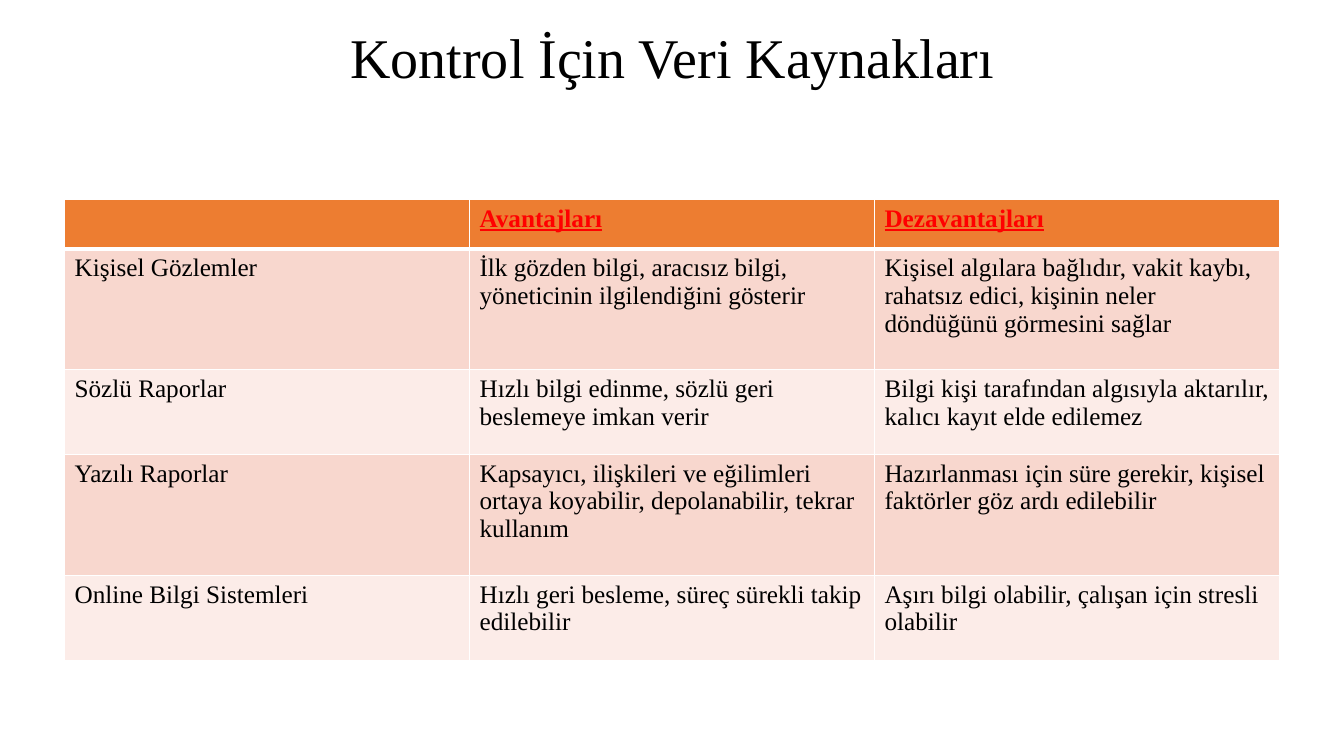
from lxml import etree
from pptx import Presentation
from pptx.dml.color import RGBColor
from pptx.enum.text import MSO_ANCHOR, PP_ALIGN
from pptx.oxml.ns import qn
from pptx.util import Inches, Pt

CENTER = PP_ALIGN.CENTER
MIDDLE = MSO_ANCHOR.MIDDLE
FONT = "Times New Roman"
WHITE, BLACK, RED = "FFFFFF", "000000", "FF0000"
HEADER_FILL = "ED7D31"
BAND_FILLS = ("F8D7CE", "FCECE8")

TITLE_FORMAT = {"name": FONT, "size": Pt(40)}
HEADER_FORMAT = {"name": FONT, "size": Pt(18), "bold": True, "underline": True}
BODY_FORMAT = {"name": FONT, "size": Pt(18), "bold": False}

ROW_HEIGHTS = (0.49, 1.2, 0.84, 1.2, 0.84)
SOURCES = (
    ("", "Avantajları", "Dezavantajları"),
    ("Kişisel Gözlemler",
     "İlk gözden bilgi, aracısız bilgi, yöneticinin ilgilendiğini gösterir",
     "Kişisel algılara bağlıdır, vakit kaybı, rahatsız edici, kişinin neler "
     "döndüğünü görmesini sağlar"),
    ("Sözlü Raporlar",
     "Hızlı bilgi edinme, sözlü geri beslemeye imkan verir",
     "Bilgi kişi tarafından algısıyla aktarılır, kalıcı kayıt elde edilemez"),
    ("Yazılı Raporlar",
     "Kapsayıcı, ilişkileri ve eğilimleri ortaya koyabilir, depolanabilir, "
     "tekrar kullanım",
     "Hazırlanması için süre gerekir, kişisel faktörler göz ardı edilebilir"),
    ("Online Bilgi Sistemleri",
     "Hızlı geri besleme, süreç sürekli takip edilebilir",
     "Aşırı bilgi olabilir, çalışan için stresli olabilir"),
)


def color(value):
    return RGBColor.from_string(value)


def write(para, text, text_color, formats):
    span = para.add_run()
    span.text = text
    for name, value in formats.items():
        setattr(span.font, name, value)
    span.font.color.rgb = color(text_color)


def set_border(cell, side, width):
    line = etree.SubElement(cell._tc.get_or_add_tcPr(), qn(f"a:ln{side}"), w=str(Pt(width)))
    fill = etree.SubElement(line, qn("a:solidFill"))
    etree.SubElement(fill, qn("a:srgbClr"), val=WHITE)


def add_title(page, left, top, width, height):
    box = page.shapes.add_textbox(Inches(left), Inches(top), Inches(width), Inches(height))
    frame = box.text_frame
    frame.word_wrap = True
    frame.margin_left = frame.margin_right = 0
    frame.vertical_anchor = MIDDLE
    para = frame.paragraphs[0]
    para.alignment = CENTER
    para.line_spacing = 0.9
    write(para, "Kontrol İçin Veri Kaynakları", BLACK, TITLE_FORMAT)


def fill_cell(cell, text, row):
    header = row == 0
    # Borders go before the fill in the cell properties
    for side in "LRTB":
        thick = (header and side == "B") or (row == 1 and side == "T")
        set_border(cell, side, 3 if thick else 1)
    cell.fill.solid()
    cell.fill.fore_color.rgb = color(HEADER_FILL if header else BAND_FILLS[(row - 1) % 2])
    if text:
        write(cell.text_frame.paragraphs[0], text, RED if header else BLACK,
              HEADER_FORMAT if header else BODY_FORMAT)


def add_source_table(page, left, top, width):
    columns = len(SOURCES[0])
    table = page.shapes.add_table(
        len(SOURCES), columns, Inches(left), Inches(top),
        Inches(width), Inches(sum(ROW_HEIGHTS))).table
    for column in table.columns:
        column.width = Inches(width / columns)
    for row, texts in enumerate(SOURCES):
        table.rows[row].height = Inches(ROW_HEIGHTS[row])
        for column, text in enumerate(texts):
            fill_cell(table.cell(row, column), text, row)


def main():
    deck = Presentation()
    deck.slide_width, deck.slide_height = Inches(13.33), Inches(7.5)
    page = deck.slides.add_slide(deck.slide_layouts[6])
    add_title(page, 3.37, 0.19, 6.6, 0.81)
    add_source_table(page, 0.64, 1.98, 12.05)
    deck.save("out.pptx")


if __name__ == "__main__":
    main()
